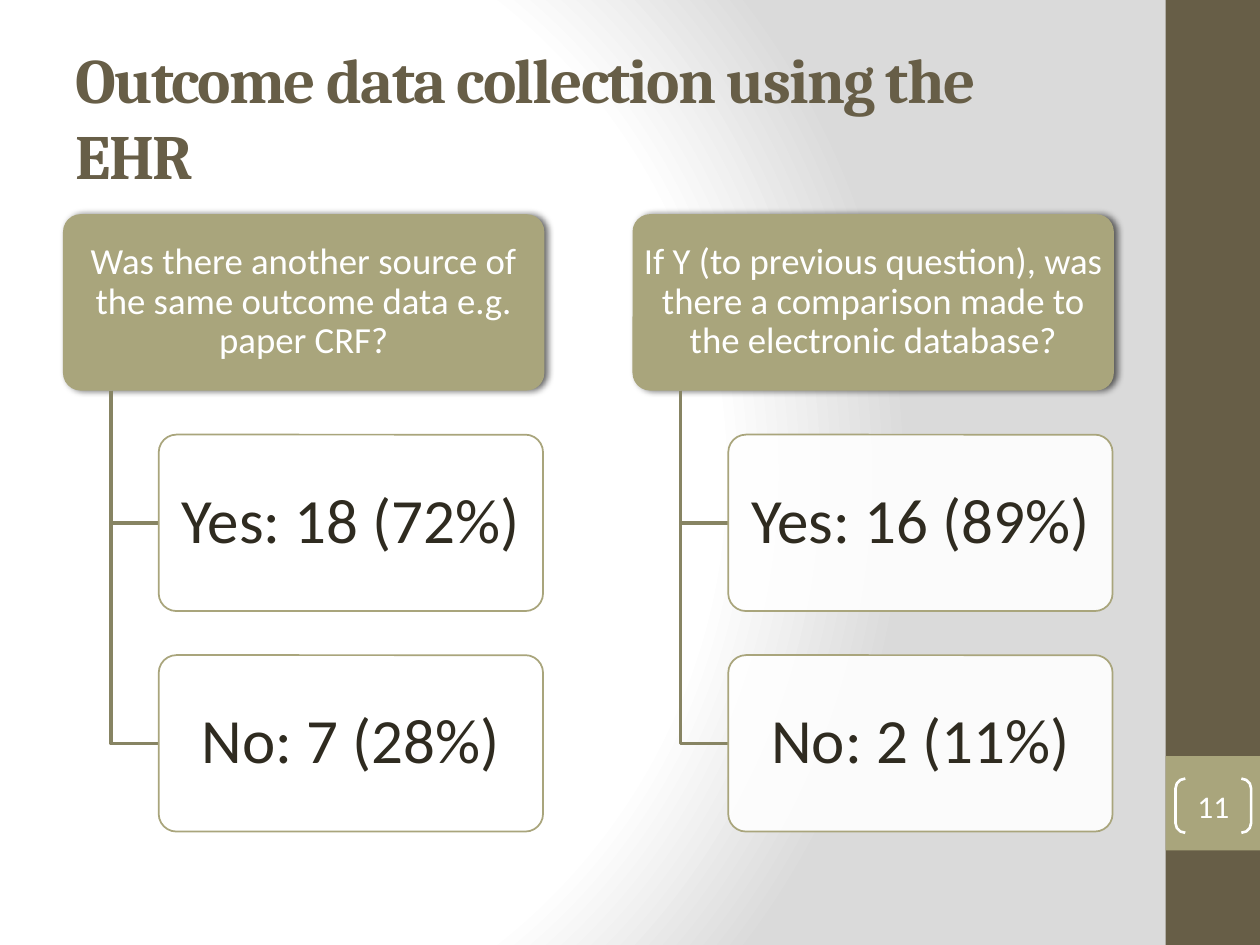
from lxml.etree import SubElement
from pptx import Presentation
from pptx.dml.color import RGBColor
from pptx.enum.shapes import MSO_SHAPE as Shape
from pptx.enum.text import MSO_ANCHOR, MSO_AUTO_SIZE, PP_ALIGN
from pptx.oxml import parse_xml
from pptx.oxml.ns import nsdecls, qn
from pptx.util import Inches, Pt

TITLE = "Outcome data collection using the EHR"
QUESTIONS = [
    ("Was there another source of the same outcome data e.g. paper CRF?",
     ["Yes: 18 (72%)", "No: 7 (28%)"]),
    ("If Y (to previous question), was there a comparison made to the electronic database?",
     ["Yes: 16 (89%)", "No: 2 (11%)"]),
]
PAGE_NUMBER = "11"

BROWN, OLIVE, DARK_OLIVE = "675E47", "A9A57C", "878463"
WHITE, INK = "FFFFFF", "2F2B20"
BACKGROUND_STOPS = [(0, WHITE), (75, WHITE), (100, "DADADA")]

LEFT, TOP, COLUMN_PITCH = 0.5, 1.7, 4.52
QUESTION_WIDTH, ANSWER_WIDTH, BOX_HEIGHT = 3.82, 3.05, 1.4
ROW_PITCH = BOX_HEIGHT * 1.25
TRUNK_INDENT, ANSWER_INDENT = 0.38, 0.76


def color(hex_code):
    return RGBColor.from_string(hex_code)


def set_background(slide):
    """Fill the slide with a circular gradient centred on the left."""
    slide.background.fill.solid()
    properties = slide.element.find(".//" + qn("p:bgPr"))
    stops = "".join(
        f'<a:gs pos="{position * 1000}"><a:srgbClr val="{code}"/></a:gs>'
        for position, code in BACKGROUND_STOPS)
    properties.replace(properties[0], parse_xml(
        f'<a:gradFill {nsdecls("a")} rotWithShape="1"><a:gsLst>{stops}</a:gsLst>'
        '<a:path path="circle"><a:fillToRect l="20000" t="50000" r="100000" b="50000"/>'
        '</a:path></a:gradFill>'))


def style(shape, fill=None, line=None, line_width=1):
    shape.shadow.inherit = False
    if fill:
        shape.fill.solid()
        shape.fill.fore_color.rgb = color(fill)
    else:
        shape.fill.background()
    if line:
        shape.line.color.rgb = color(line)
        shape.line.width = Pt(line_width)
    else:
        shape.line.fill.background()


def add_box(slide, kind, left, top, width, height, adjustment=None, **look):
    shape = slide.shapes.add_shape(
        kind, Inches(left), Inches(top), Inches(width), Inches(height))
    if adjustment is not None:
        shape.adjustments[0] = adjustment
    style(shape, **look)
    return shape


def write(shape, text, size, text_color, font="Calibri", bold=False,
          align=PP_ALIGN.CENTER, margins=(0, 0), line_spacing=None):
    frame = shape.text_frame
    frame.word_wrap = True
    frame.auto_size = MSO_AUTO_SIZE.NONE
    frame.vertical_anchor = MSO_ANCHOR.MIDDLE
    frame.margin_left = frame.margin_right = Inches(margins[0])
    frame.margin_top = frame.margin_bottom = Inches(margins[1])
    paragraph = frame.paragraphs[0]
    paragraph.alignment = align
    paragraph.line_spacing = line_spacing
    run = paragraph.add_run()
    run.text = text
    run.font.size, run.font.name, run.font.bold = Pt(size), font, bold
    run.font.color.rgb = color(text_color)
    return run


def add_shadow(shape):
    effects = shape.element.spPr.find(qn("a:effectLst"))
    shadow = SubElement(effects, qn("a:outerShdw"), blurRad=str(Pt(4)),
                        dist=str(Pt(2)), dir="0", rotWithShape="0")
    black = SubElement(shadow, qn("a:srgbClr"), val="000000")
    SubElement(black, qn("a:alpha"), val="60000")


def set_opacity(shape, percent):
    fill_color = shape.element.spPr.find(qn("a:solidFill"))[0]
    SubElement(fill_color, qn("a:alpha"), val=str(percent * 1000))


def add_elbow(slide, left, top, right, bottom):
    """Draw a branch that runs down and then right."""
    builder = slide.shapes.build_freeform(Inches(left), Inches(top))
    builder.add_line_segments(
        [(Inches(left), Inches(bottom)), (Inches(right), Inches(bottom))], close=False)
    style(builder.convert_to_shape(), line=DARK_OLIVE, line_width=2)


def add_question(slide, left, question, answers):
    box = add_box(slide, Shape.ROUNDED_RECTANGLE, left, TOP, QUESTION_WIDTH,
                  BOX_HEIGHT, 0.1, fill=OLIVE)
    add_shadow(box)
    write(box, question, 21, WHITE, margins=(0.04, 0.03), line_spacing=0.9)
    answer_left = left + ANSWER_INDENT
    for row, answer in enumerate(answers, start=1):
        top = TOP + row * ROW_PITCH
        add_elbow(slide, left + TRUNK_INDENT, TOP + BOX_HEIGHT,
                  answer_left, top + BOX_HEIGHT / 2)
        box = add_box(slide, Shape.ROUNDED_RECTANGLE, answer_left, top, ANSWER_WIDTH,
                      BOX_HEIGHT, 0.1, fill=WHITE, line=OLIVE)
        set_opacity(box, 90)
        write(box, answer, 36, INK, margins=(0.07, 0.05), line_spacing=0.9)


def main():
    presentation = Presentation()
    presentation.slide_width, presentation.slide_height = Inches(10), Inches(7.5)
    slide = presentation.slides.add_slide(presentation.slide_layouts[5])
    set_background(slide)

    add_box(slide, Shape.RECTANGLE, 9.25, 0, 0.75, 7.5, fill=BROWN)
    add_box(slide, Shape.RECTANGLE, 9.25, 6, 0.75, 0.75, fill=OLIVE)

    title = slide.shapes.title
    title.left, title.top = Inches(0.5), Inches(0.3)
    title.width, title.height = Inches(8.33), Inches(1.25)
    run = write(title, TITLE, 36, BROWN, font="Cambria", bold=True,
                align=PP_ALIGN.LEFT, margins=(0.1, 0.05))
    run.font._element.set("spc", "-100")

    for column, (question, answers) in enumerate(QUESTIONS):
        add_question(slide, LEFT + column * COLUMN_PITCH, question, answers)

    brackets = add_box(slide, Shape.DOUBLE_BRACKET, 9.33, 6.18, 0.6, 0.43, 0.18,
                       line=WHITE, line_width=1.5)
    write(brackets, PAGE_NUMBER, 18, WHITE)
    presentation.save("out.pptx")


if __name__ == "__main__":
    main()
